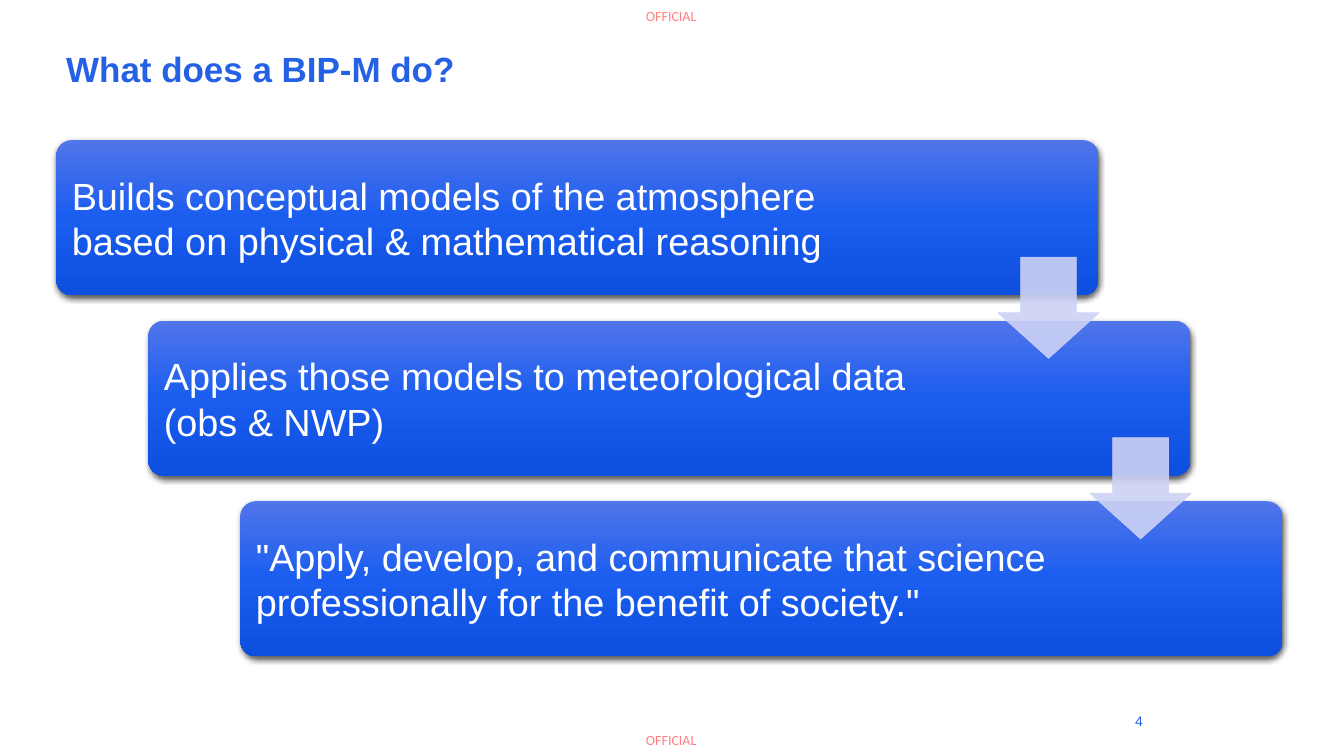
from dataclasses import dataclass

from lxml import etree
from pptx import Presentation
from pptx.dml.color import RGBColor
from pptx.enum.shapes import MSO_SHAPE
from pptx.enum.text import MSO_ANCHOR, PP_ALIGN
from pptx.oxml.ns import qn
from pptx.shapes.autoshape import Shape
from pptx.slide import Slide
from pptx.util import Cm, Pt

ROUNDED = MSO_SHAPE.ROUNDED_RECTANGLE
DOWN_ARROW = MSO_SHAPE.DOWN_ARROW
TOP, MIDDLE = MSO_ANCHOR.TOP, MSO_ANCHOR.MIDDLE
LEFT, RIGHT = PP_ALIGN.LEFT, PP_ALIGN.RIGHT

BLUE, WHITE, RED, PALE = "2461E5", "FFFFFF", "FF0000", "CDD2F5"
GRADIENT = ((0, "5175EA"), (50, "1A5DEF"), (100, "0D4FDF"))

# Staircase measures in centimetres
STEP_LEFT, STEP_TOP = 1.42, 3.53
STEP_WIDTH, STEP_HEIGHT = 26.26, 3.91
SHIFT_X, SHIFT_Y = 2.32, 4.55
TEXT_MARGIN = 0.11
ARROW_LEFT, ARROW_TOP, ARROW_SIZE = 25.15, 6.48, 2.55


@dataclass
class Label:
    text: str
    left: float
    top: float
    width: float
    height: float
    size: float
    color: str
    font: str = "Arial"
    bold: bool = False
    opacity: int = 100
    anchor: MSO_ANCHOR = TOP
    align: PP_ALIGN = LEFT
    inset_x: float = 0.25
    inset_y: float = 0.13
    line_spacing: float = 1.0
    wrap: bool = True


@dataclass
class Step:
    text: str
    text_width: float


LABELS = [
    *(Label("OFFICIAL", 16.28, top, 1.35, 0.43, 10, RED, font="Calibri", opacity=50,
            inset_x=0, inset_y=0, wrap=False) for top in (0.18, 18.44)),
    Label("What does a BIP-M do?", 1.42, 1.19, 24.74, 1.3, 25, BLUE, bold=True,
          line_spacing=0.9),
    Label("4", 23.44, 17.65, 5.61, 1.02, 10, BLUE, anchor=MIDDLE, align=RIGHT),
]

STEPS = [
    Step("Builds conceptual models of the atmosphere based on physical & mathematical "
         "reasoning", 22.05),
    Step("Applies those models to meteorological data (obs & NWP)", 21.18),
    Step('"Apply, develop, and communicate that science professionally for the benefit '
         'of society."', 21.18),
]


def rgb(color: str) -> RGBColor:
    return RGBColor.from_string(color)


def add_color(parent: etree.ElementBase, color: str, opacity: int = 100) -> None:
    element = etree.SubElement(parent, qn("a:srgbClr"), val=color)
    if opacity < 100:
        etree.SubElement(element, qn("a:alpha"), val=str(opacity * 1000))


def set_opacity(parent: etree.ElementBase, opacity: int) -> None:
    for element in parent.iter(qn("a:srgbClr")):
        etree.SubElement(element, qn("a:alpha"), val=str(opacity * 1000))


def add_label(slide: Slide, label: Label) -> None:
    box = slide.shapes.add_textbox(Cm(label.left), Cm(label.top),
                                   Cm(label.width), Cm(label.height))
    frame = box.text_frame
    frame.word_wrap = label.wrap
    frame.vertical_anchor = label.anchor
    frame.margin_left = frame.margin_right = Cm(label.inset_x)
    frame.margin_top = frame.margin_bottom = Cm(label.inset_y)
    paragraph = frame.paragraphs[0]
    paragraph.alignment = label.align
    paragraph.line_spacing = label.line_spacing
    run = paragraph.add_run()
    run.text = label.text
    run.font.name = label.font
    run.font.size = Pt(label.size)
    run.font.bold = label.bold
    run.font.color.rgb = rgb(label.color)
    if label.opacity < 100:
        set_opacity(box.element, label.opacity)


def set_gradient(shape: Shape) -> None:
    properties = shape.element.spPr
    gradient = etree.Element(qn("a:gradFill"), rotWithShape="1")
    stops = etree.SubElement(gradient, qn("a:gsLst"))
    for position, color in GRADIENT:
        stop = etree.SubElement(stops, qn("a:gs"), pos=str(position * 1000))
        add_color(stop, color)
    etree.SubElement(gradient, qn("a:lin"), ang="5400000", scaled="0")
    properties.find(qn("a:prstGeom")).addnext(gradient)


def set_shadow(shape: Shape) -> None:
    shape.shadow.inherit = False
    effects = shape.element.spPr.find(qn("a:effectLst"))
    shadow = etree.SubElement(effects, qn("a:outerShdw"), blurRad=str(Pt(4.5)),
                              dist=str(Pt(1.5)), dir="5400000", rotWithShape="0")
    add_color(shadow, "000000", 63)


def add_step(slide: Slide, step: Step, index: int) -> None:
    left = STEP_LEFT + index * SHIFT_X
    top = STEP_TOP + index * SHIFT_Y
    panel = slide.shapes.add_shape(ROUNDED, Cm(left), Cm(top),
                                   Cm(STEP_WIDTH), Cm(STEP_HEIGHT))
    panel.adjustments[0] = 0.1
    set_gradient(panel)
    panel.line.fill.background()
    set_shadow(panel)
    add_label(slide, Label(step.text, left + TEXT_MARGIN, top + TEXT_MARGIN,
                           step.text_width, STEP_HEIGHT - 2 * TEXT_MARGIN, 27, WHITE,
                           anchor=MIDDLE, inset_x=0.28, inset_y=0.28))


def add_arrow(slide: Slide, index: int) -> None:
    arrow = slide.shapes.add_shape(DOWN_ARROW, Cm(ARROW_LEFT + index * SHIFT_X),
                                   Cm(ARROW_TOP + index * SHIFT_Y),
                                   Cm(ARROW_SIZE), Cm(ARROW_SIZE))
    # Shaft width is the first adjustment in the list, head length the second
    arrow.adjustments[0] = 0.55
    arrow.adjustments[1] = 0.45
    arrow.shadow.inherit = False
    arrow.fill.solid()
    arrow.fill.fore_color.rgb = rgb(PALE)
    arrow.line.color.rgb = rgb(PALE)
    arrow.line.width = Pt(0.5)
    set_opacity(arrow.element.spPr, 90)


def main() -> None:
    presentation = Presentation()
    presentation.slide_width = Cm(33.87)
    presentation.slide_height = Cm(19.05)
    slide = presentation.slides.add_slide(presentation.slide_layouts[6])

    # Markings, title and page number
    for label in LABELS:
        add_label(slide, label)

    # Staircase, then the arrows lying over it
    for index, step in enumerate(STEPS):
        add_step(slide, step, index)
    for index in range(len(STEPS) - 1):
        add_arrow(slide, index)

    presentation.save("out.pptx")


if __name__ == "__main__":
    main()
